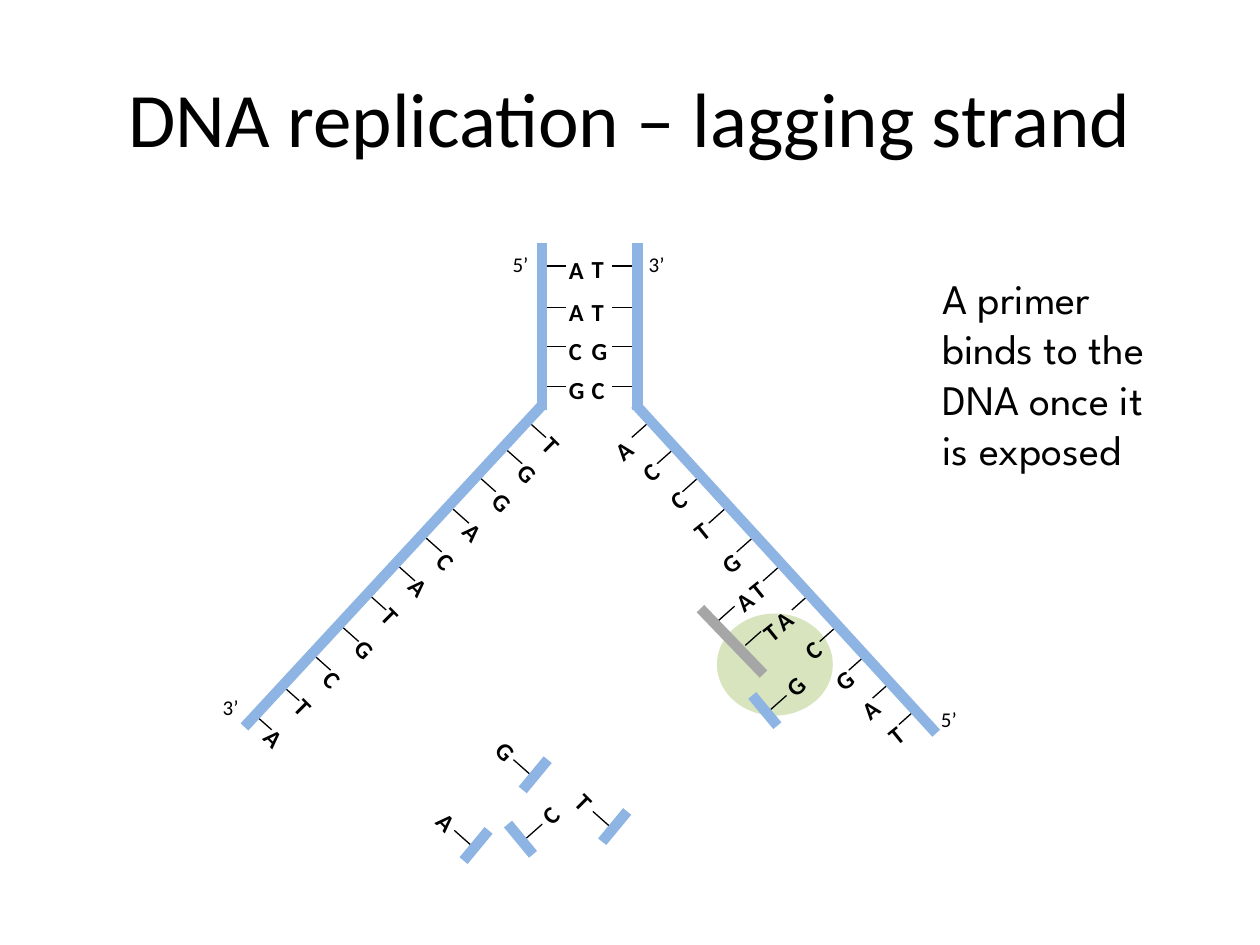
from lxml import etree
from pptx import Presentation
from pptx import util as u
from pptx.dml.color import RGBColor
from pptx.enum import shapes, text
from pptx.oxml.ns import qn

BLACK = RGBColor(0x00, 0x00, 0x00)
STRAND_BLUE = RGBColor(0x8E, 0xB4, 0xE3)
PRIMER_GREY = RGBColor(0xA6, 0xA6, 0xA6)
ENZYME_GREEN = RGBColor(0xD7, 0xE4, 0xBD)

BASE_SIZE = 22.3                # side of the box around one base letter
TICK_WIDTH, TICK_HEIGHT = 9, 8  # bond between a strand and its base
LEFT_TURN, RIGHT_TURN = 45, 321

# Paired bases: letters, bond height, top of the left and right letter
PAIRS = [("AT", 152, 139.7, 139), ("AT", 175.6, 163.4, 163.4),
         ("CG", 198, 185.8, 185.8), ("GC", 221, 208, 208)]

# Open strands: base, bond start (x, y), letter box (left, top)
LEFT_STRAND = [
    ("T", 303, 242, 306.7, 241.2), ("G", 289.4, 257, 292.3, 256.3),
    ("G", 274.3, 273, 277.9, 272.9), ("A", 259, 291, 261.4, 290.2),
    ("C", 243.4, 307.4, 246.2, 307.4), ("A", 228.2, 324, 230.4, 321.8),
    ("T", 211.7, 340.6, 214.6, 339.1), ("G", 196, 358.6, 199.4, 357.1),
    ("C", 180, 375, 181.4, 375.1), ("T", 162, 392.4, 164.9, 391),
    ("A", 146.2, 409, 147.6, 408.2)]
RIGHT_STRAND = [
    ("A", 370, 242, 342.7, 243.4), ("C", 384.5, 257, 358.6, 255.6),
    ("C", 399, 273, 374.4, 271.4), ("T", 414, 291, 388.1, 289.4),
    ("G", 430, 307.4, 403.9, 308.2), ("T", 445, 324, 419.8, 323.3),
    ("A", 461.5, 340.6, 434.2, 340.6), ("C", 477.4, 358.6, 451.4, 357.1),
    ("G", 494, 375, 468.7, 375.1), ("A", 507.6, 391, 483.8, 391.7),
    ("T", 522.7, 406, 499, 406.1)]
PRIMER = [("A", 419.8, 346.4, 411.8, 329.8), ("T", 434.9, 360.8, 427.7, 347)]

# Single nucleotides: base, letter box (left, top), facing left or right
NUCLEOTIDES = [("G", 440.6, 378.7, True), ("C", 301, 452.2, True),
               ("G", 280, 415.4, False), ("A", 246.2, 455.8, False),
               ("T", 325.4, 445, False)]

END_LABELS = [("5’", 285.8, 138.2), ("3’", 120.2, 391),
              ("5’", 530.6, 398.2), ("3’", 363.6, 138.2)]


class SlideBuilder:
    """Holds the text style and the slide being drawn."""

    font = "Calibri"
    thin, thick = 0.75, 6

    def __init__(self, page):
        self.page = page

    def style(self, para, size, bold=False, font=None):
        para.font.name = font or self.font
        para.font.size = u.Pt(size)
        para.font.bold = bold
        para.font.color.rgb = BLACK

    def title(self, words, left, top, width, height):
        box = self.page.shapes.title
        box.left, box.top = u.Pt(left), u.Pt(top)
        box.width, box.height = u.Pt(width), u.Pt(height)
        box.text_frame.text = words
        box.text_frame.vertical_anchor = text.MSO_ANCHOR.MIDDLE
        para = box.text_frame.paragraphs[0]
        para.alignment = text.PP_ALIGN.CENTER
        self.style(para, 44)

    def textbox(self, words, left, top, width, height, size, **style):
        box = self.page.shapes.add_textbox(
            u.Pt(left), u.Pt(top), u.Pt(width), u.Pt(height))
        box.text_frame.word_wrap = True
        box.text_frame.text = words
        self.style(box.text_frame.paragraphs[0], size, **style)
        return box

    def label(self, words, left, top, width, size, bold=False):
        box = self.textbox(words, left, top, width, BASE_SIZE, size, bold=bold)
        para = box.text_frame.paragraphs[0]
        para.line_spacing = 1.15
        para.space_after = u.Pt(10)
        return box

    def base(self, letter, left, top, turn=0):
        self.label(letter, left, top, BASE_SIZE, 14, bold=True).rotation = turn

    def line(self, x1, y1, x2, y2, color=BLACK, width=thin):
        line = self.page.shapes.add_connector(
            shapes.MSO_CONNECTOR.STRAIGHT, u.Pt(x1), u.Pt(y1), u.Pt(x2), u.Pt(y2))
        line.line.color.rgb = color
        line.line.width = u.Pt(width)
        etree.SubElement(line._element.spPr, qn("a:effectLst"))

    def bar(self, x1, y1, x2, y2, color=STRAND_BLUE):
        self.line(x1, y1, x2, y2, color, self.thick)

    def ellipse(self, left, top, width, height, color):
        oval = self.page.shapes.add_shape(
            shapes.MSO_SHAPE.OVAL, u.Pt(left), u.Pt(top), u.Pt(width), u.Pt(height))
        oval.shadow.inherit = False
        oval.fill.solid()
        oval.fill.fore_color.rgb = color
        oval.line.fill.background()

    def strand(self, bases, direction, turn):
        for letter, x, y, left, top in bases:
            self.line(x, y, x + direction * TICK_WIDTH, y + TICK_HEIGHT)
            self.base(letter, left, top, turn)

    def nucleotide(self, letter, left, top, mirrored):
        def across(x):
            return left + (BASE_SIZE - x if mirrored else x)

        self.base(letter, left, top, 315 if mirrored else 45)
        self.line(across(23), top + 27.2, across(13.4), top + 18.7)
        self.bar(across(33), top + 18.7, across(18.7), top + 36)


def main():
    deck = Presentation()
    deck.slide_width, deck.slide_height = u.Pt(720), u.Pt(540)
    slide = SlideBuilder(deck.slides.add_slide(deck.slide_layouts[5]))

    # Title and enzyme
    slide.title("DNA replication – lagging strand", 36, 21.6, 648, 90)
    slide.ellipse(409.7, 350.6, 66.2, 58.3, ENZYME_GREEN)

    # Closed part of the helix
    for (first, second), y, first_top, second_top in PAIRS:
        slide.line(312.4, y, 323.4, y)
        slide.line(361, y, 350, y)
        slide.base(first, 318, first_top)
        slide.base(second, 331, second_top)

    # Open strands and backbones
    slide.strand(LEFT_STRAND, 1, LEFT_TURN)
    slide.strand(RIGHT_STRAND, -1, RIGHT_TURN)
    slide.bar(309.6, 139, 309.6, 234)
    slide.bar(310.3, 231, 139.7, 415.4)
    slide.bar(364.3, 139, 364.3, 234)
    slide.bar(363, 231, 535, 419)

    # Primer
    slide.bar(436.3, 385.2, 400.3, 347.8, PRIMER_GREY)
    slide.strand(PRIMER, -1, RIGHT_TURN)

    # Free nucleotides
    for nucleotide in NUCLEOTIDES:
        slide.nucleotide(*nucleotide)

    # Strand ends and explanation
    for words, left, top in END_LABELS:
        slide.label(words, left, top, 27.4, 12)
    slide.textbox("A primer binds to the DNA once it is exposed",
                  531.4, 152, 138.2, 152.6, 24, font="League Spartan")

    deck.save("out.pptx")


if __name__ == "__main__":
    main()
